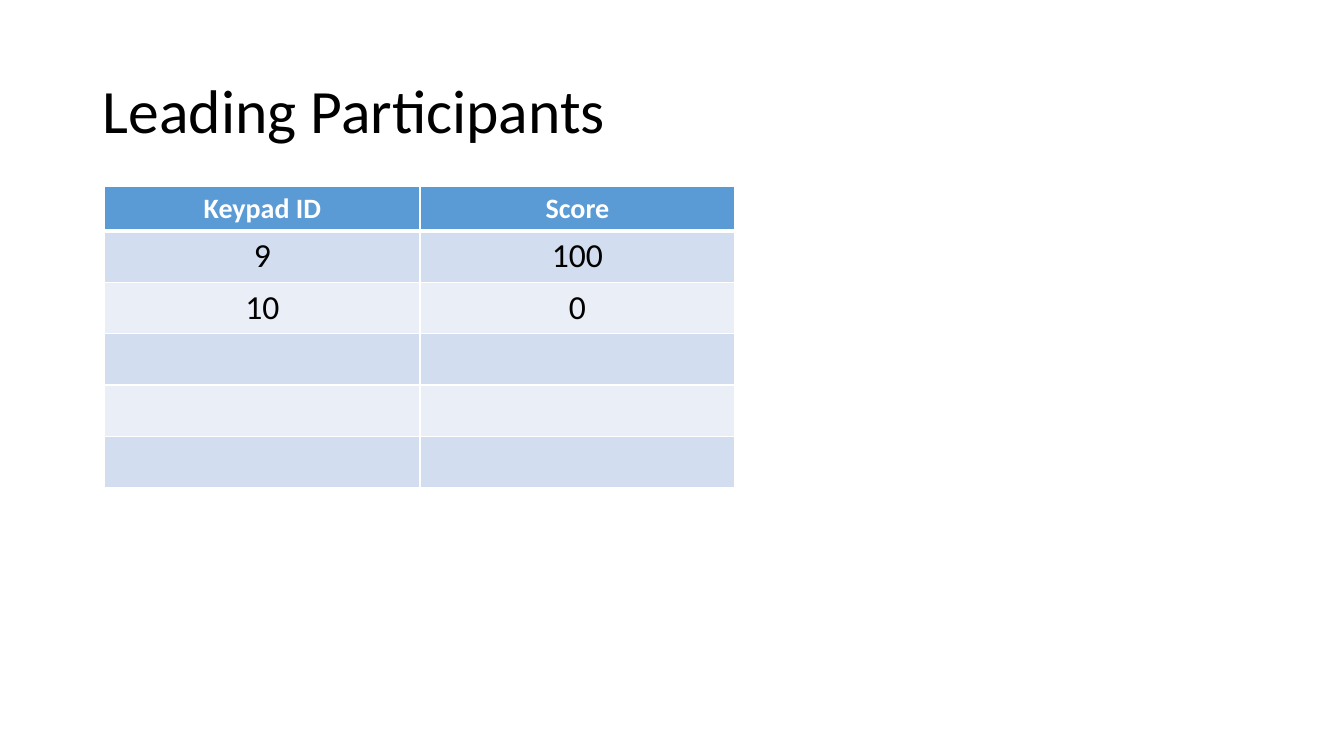
from dataclasses import dataclass

from pptx import Presentation
from pptx.dml.color import RGBColor
from pptx.enum import text
from pptx.oxml import parse_xml
from pptx.oxml.ns import nsdecls
from pptx.util import Inches, Pt


@dataclass(frozen=True)
class Theme:
    """Colours, font and type sizes of the slide."""
    face: str = "Calibri"
    ink: str = "000000"
    paper: str = "FFFFFF"
    head: str = "5B9BD5"
    bands: tuple = ("D2DEEF", "EAEFF7")
    title: int = 44
    label: int = 20
    score: int = 24


THEME = Theme()
SCORES = [("Keypad ID", "Score"), ("9", "100"), ("10", "0")] + [("", "")] * 3


def style(para, size, color, align, bold=False):
    """Set the font and alignment of a paragraph."""
    font = para.font
    font.name, font.size, font.bold = THEME.face, Pt(size), bold
    font.color.rgb = RGBColor.from_string(color)
    para.alignment = align


def add_title(slide, words):
    """Place and format the title."""
    title = slide.shapes.title
    title.left, title.top = Inches(0.92), Inches(0.4)
    title.width, title.height = Inches(11.5), Inches(1.45)
    frame = title.text_frame
    frame.text = words
    frame.vertical_anchor = text.MSO_ANCHOR.MIDDLE
    para = frame.paragraphs[0]
    para.line_spacing = 0.9
    style(para, THEME.title, THEME.ink, text.PP_ALIGN.LEFT)


def add_edge(cell, side, width):
    """Draw one white border of a cell."""
    cell._tc.get_or_add_tcPr().append(parse_xml(
        f'<a:ln{side} {nsdecls("a")} w="{Pt(width)}"><a:solidFill>'
        f'<a:srgbClr val="{THEME.paper}"/></a:solidFill></a:ln{side}>'))


def fill_cell(cell, words, row):
    """Write and format one cell according to its row."""
    head = row == 0
    for side in "LRTB":
        thick = (row, side) in ((0, "B"), (1, "T"))
        add_edge(cell, side, 3 if thick else 1)
    cell.fill.solid()
    color = THEME.head if head else THEME.bands[(row - 1) % 2]
    cell.fill.fore_color.rgb = RGBColor.from_string(color)
    cell.text = words
    style(cell.text_frame.paragraphs[0],
          THEME.label if head else THEME.score,
          THEME.paper if head else THEME.ink,
          text.PP_ALIGN.CENTER, head)


def add_scores(slide, rows):
    """Add the score table with a header and banded rows."""
    table = slide.shapes.add_table(
        len(rows), len(rows[0]), Inches(1.04), Inches(1.85),
        Inches(6.25), Inches(2.93)).table
    for r, row in enumerate(rows):
        table.rows[r].height = Inches(0.51 if r else 0.44)
        for c, words in enumerate(row):
            fill_cell(table.cell(r, c), words, r)


def main():
    """Build and save the slide."""
    deck = Presentation()
    deck.slide_width, deck.slide_height = Inches(13.33), Inches(7.5)
    slide = deck.slides.add_slide(deck.slide_layouts.get_by_name("Title Only"))
    add_title(slide, "Leading Participants")
    add_scores(slide, SCORES)
    deck.save("out.pptx")


if __name__ == "__main__":
    main()
